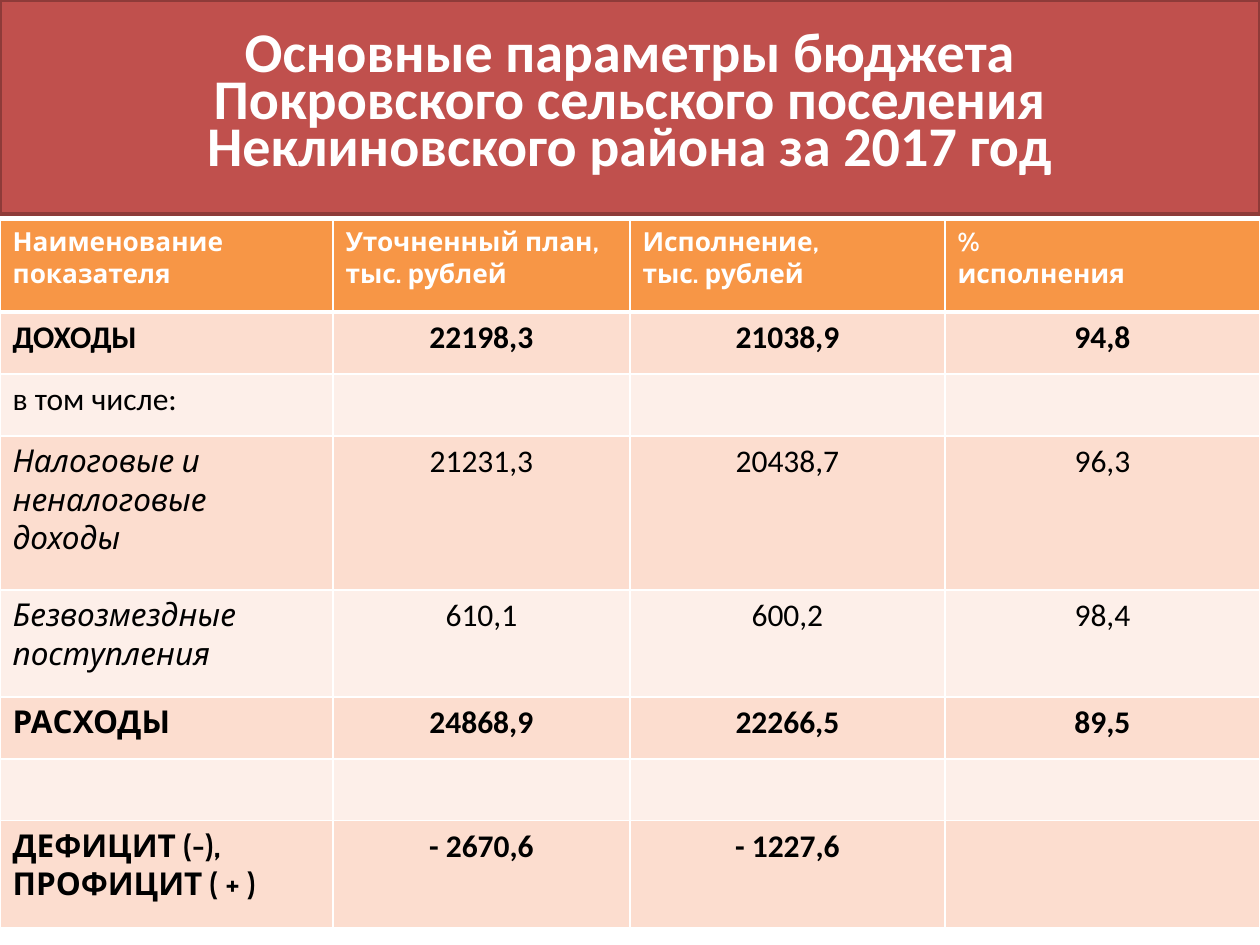
from typing import NamedTuple

from lxml.etree import SubElement
from pptx import Presentation
from pptx.dml.color import RGBColor
from pptx.enum.shapes import MSO_SHAPE
from pptx.enum.text import MSO_ANCHOR, PP_ALIGN
from pptx.oxml.ns import qn
from pptx.util import Emu, Pt

SCALE = 914400 / 126
WHITE, BLACK = "FFFFFF", "000000"
RED, EDGE, ORANGE = "C0504D", "8E3B39", "F79646"
BANDS = ("FCDDCF", "FDEFE9")
WIDTHS = (333, 297, 315, 315)


class Style(NamedTuple):
    face: str
    size: int
    tint: str
    bold: bool = False
    slant: bool = False


class Row(NamedTuple):
    height: int
    texts: tuple[str, ...]
    label: Style
    value: Style


HEAD = Style("Cabin", 15, WHITE, bold=True)
PLAIN = Style("Calibri", 18, BLACK)
BOLD = Style("Calibri", 18, BLACK, bold=True)
TOTAL = Style("Cabin", 18, BLACK, bold=True)
PART = Style("Cabin", 18, BLACK, slant=True)
BLANK = ("", "", "")

ROWS = (
    Row(92, ("Наименование\nпоказателя", "Уточненный план,\nтыс. рублей",
             "Исполнение,\nтыс. рублей", "%\nисполнения"), HEAD, HEAD),
    Row(62, ("ДОХОДЫ", "22198,3", "21038,9", "94,8"), BOLD, BOLD),
    Row(62, ("в том числе:", *BLANK), PLAIN, PLAIN),
    Row(154, ("Налоговые и\nненалоговые доходы", "21231,3", "20438,7", "96,3"),
        PART, PLAIN),
    Row(107, ("Безвозмездные\nпоступления", "610,1", "600,2", "98,4"), PART, PLAIN),
    Row(62, ("РАСХОДЫ", "24868,9", "22266,5", "89,5"), TOTAL, BOLD),
    Row(62, ("", *BLANK), PLAIN, PLAIN),
    Row(107, ("ДЕФИЦИТ (-),\nПРОФИЦИТ ( + )", "- 2670,6", "- 1227,6", ""),
        TOTAL, BOLD),
)


def px(count: int) -> Emu:
    return Emu(round(count * SCALE))


def paint(fill, tint: str) -> None:
    fill.solid()
    fill.fore_color.rgb = RGBColor.from_string(tint)


def write(frame, text: str, style: Style, align: PP_ALIGN) -> None:
    frame.text = text
    for para in frame.paragraphs:
        para.alignment = align
        for run in para.runs:
            font = run.font
            font.name, font.size = style.face, Pt(style.size)
            font.bold, font.italic = style.bold, style.slant
            paint(font.fill, style.tint)


def border(cell, top: int, bottom: int) -> None:
    props = cell._tc.get_or_add_tcPr()
    sides = {"L": 1, "R": 1, "T": top, "B": bottom}
    for spot, (side, width) in enumerate(sides.items()):
        line = SubElement(props, qn(f"a:ln{side}"), w=str(Pt(width)))
        fill = SubElement(line, qn("a:solidFill"))
        SubElement(fill, qn("a:srgbClr"), val=WHITE)
        props.insert(spot, line)


def banner(slide) -> None:
    box = slide.shapes.add_shape(MSO_SHAPE.RECTANGLE, 0, 0, px(1260), px(214))
    box.shadow.inherit = False
    paint(box.fill, RED)
    paint(box.line.fill, EDGE)
    box.line.width = Pt(2)
    frame = box.text_frame
    frame.word_wrap = True
    frame.vertical_anchor = MSO_ANCHOR.MIDDLE
    title = ("Основные параметры бюджета\vПокровского сельского поселения\v"
             "Неклиновского района за 2017 год")
    write(frame, title, Style("Calibri", 32, WHITE, bold=True), PP_ALIGN.CENTER)
    frame.paragraphs[0].line_spacing = Pt(27)


def budget(slide) -> None:
    height = sum(row.height for row in ROWS)
    table = slide.shapes.add_table(len(ROWS), len(WIDTHS), 0, px(220),
                                   px(sum(WIDTHS)), px(height)).table
    for column, width in zip(table.columns, WIDTHS):
        column.width = px(width)
    for y, row in enumerate(ROWS):
        table.rows[y].height = px(row.height)
        for x, text in enumerate(row.texts):
            cell = table.cell(y, x)
            left = x == 0 or y == 0
            write(cell.text_frame, text, row.label if x == 0 else row.value,
                  PP_ALIGN.LEFT if left else PP_ALIGN.CENTER)
            paint(cell.fill, BANDS[(y - 1) % 2] if y else ORANGE)
            border(cell, 3 if y == 1 else 1, 3 if y == 0 else 1)


def main() -> None:
    deck = Presentation()
    deck.slide_width, deck.slide_height = px(1260), px(945)
    slide = deck.slides.add_slide(deck.slide_layouts[6])
    banner(slide)
    budget(slide)
    deck.save("out.pptx")


if __name__ == "__main__":
    main()
